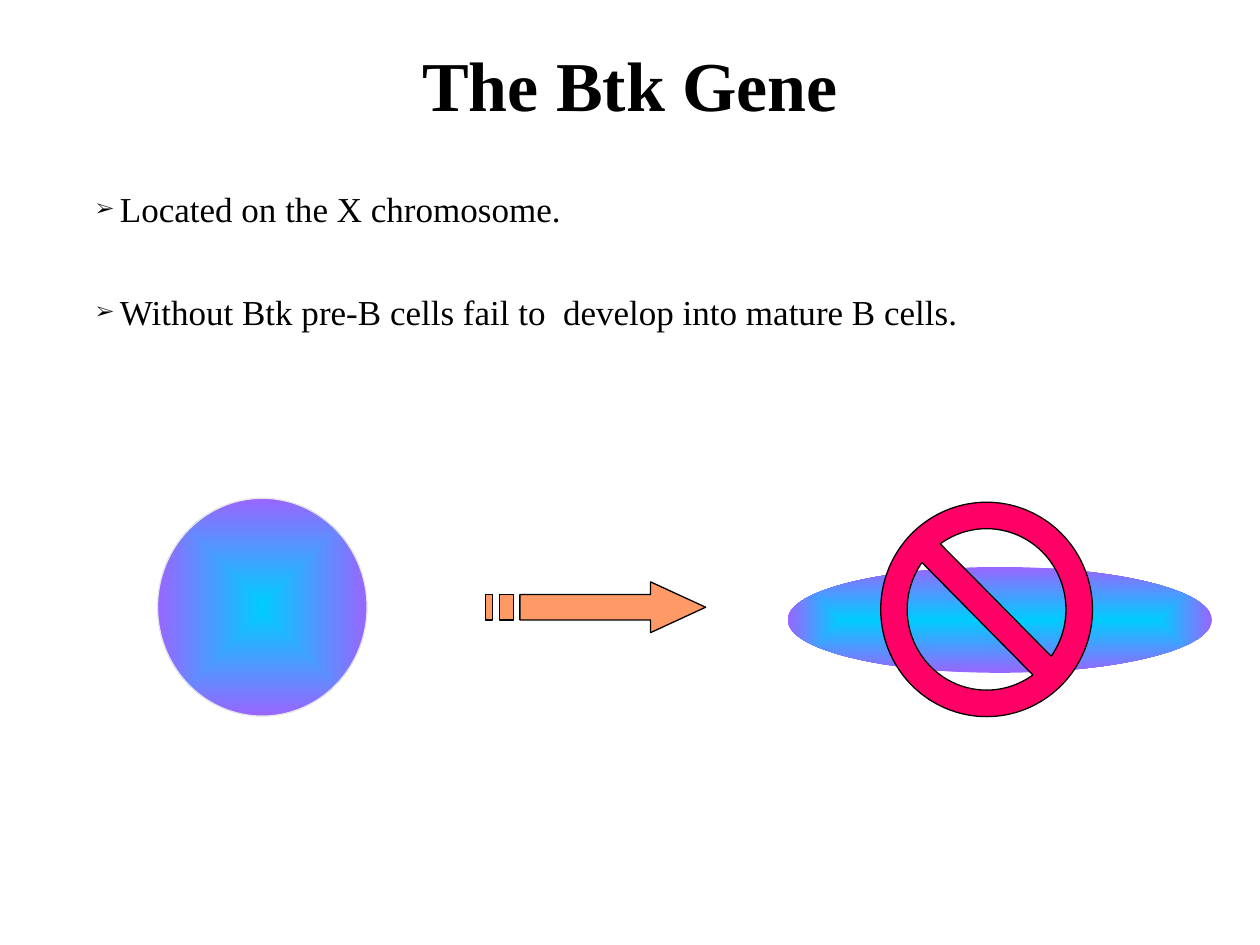
from dataclasses import dataclass
from typing import Optional

from lxml import etree
from pptx import Presentation
from pptx.dml.color import RGBColor
from pptx.enum.shapes import MSO_SHAPE
from pptx.enum.text import MSO_ANCHOR, PP_ALIGN
from pptx.oxml.ns import qn
from pptx.util import Pt

OVAL = MSO_SHAPE.OVAL
BAN = MSO_SHAPE.NO_SYMBOL
TOP, MID = MSO_ANCHOR.TOP, MSO_ANCHOR.MIDDLE
LEFT, CENTER = PP_ALIGN.LEFT, PP_ALIGN.CENTER
FONT = "Times New Roman"
BLACK, CYAN, VIOLET = "000000", "00CCFF", "9966FF"
GRAY, PINK, ORANGE = "E7E6E6", "FF0066", "FF9966"


@dataclass
class Box:
    x: float
    y: float
    w: float
    h: float

    def emu(self):
        return [Pt(v) for v in (self.x, self.y, self.w, self.h)]


@dataclass
class Cell:
    box: Box
    edge: Optional[str] = None


def tint(code: str) -> RGBColor:
    return RGBColor.from_string(code)


def outline(shape, code: Optional[str]) -> None:
    shape.shadow.inherit = False
    if code is None:
        shape.line.fill.background()
    else:
        shape.line.color.rgb = tint(code)
        shape.line.width = Pt(0.75)


def paint(shape, fill: str) -> None:
    shape.fill.solid()
    shape.fill.fore_color.rgb = tint(fill)
    outline(shape, BLACK)


def add_text(slide, box: Box, lines: list[str], *, size: float,
             bold: bool = False, align=LEFT, anchor=TOP,
             gap: float = 0, mark: Optional[str] = None) -> None:
    frame = slide.shapes.add_textbox(*box.emu()).text_frame
    frame.word_wrap = True
    frame.vertical_anchor = anchor
    for i, line in enumerate(lines):
        para = frame.add_paragraph() if i else frame.paragraphs[0]
        para.alignment = align
        para.line_spacing = 0.9
        para.space_before = Pt(gap if i else 0)
        if mark:
            props = para._p.get_or_add_pPr()
            props.set("marL", str(Pt(13.5)))
            props.set("indent", str(-Pt(13.5)))
            etree.SubElement(props, qn("a:buSzPct"), val="55000")
            etree.SubElement(props, qn("a:buFont"), typeface=FONT)
            etree.SubElement(props, qn("a:buChar"), char=mark)
        run = para.add_run()
        run.text = line
        run.font.name = FONT
        run.font.size = Pt(size)
        run.font.bold = bold
        run.font.color.rgb = tint(BLACK)


def add_cell(shapes, cell: Cell) -> None:
    oval = shapes.add_shape(OVAL, *cell.box.emu())
    oval.fill.gradient()
    for stop, code in zip(oval.fill.gradient_stops, (CYAN, VIOLET)):
        stop.color.rgb = tint(code)
    grad = oval._element.spPr.find(qn("a:gradFill"))
    grad.remove(grad.find(qn("a:lin")))
    path = etree.SubElement(grad, qn("a:path"), path="shape")
    sides = dict.fromkeys("ltrb", "50000")
    etree.SubElement(path, qn("a:fillToRect"), **sides)
    outline(oval, cell.edge)


def add_ban(shapes, box: Box) -> None:
    ban = shapes.add_shape(BAN, *box.emu())
    ban.adjustments[0] = 0.125
    paint(ban, PINK)


def add_arrow(shapes, box: Box) -> None:
    top, low = box.y + box.h / 4, box.y + box.h * 3 / 4
    end, neck = box.x + box.w, box.x + box.w * 0.75
    body = box.x + 19.6
    rings = [[(neck, box.y), (neck, top), (body, top), (body, low),
              (neck, low), (neck, box.y + box.h), (end, box.y + box.h / 2)]]
    for left, wide in ((7.9, 8), (0, 4)):
        x = box.x + left
        rings.append([(x, top), (x, low), (x + wide, low), (x + wide, top)])
    pen = None
    for ring in rings:
        spots = [(Pt(x), Pt(y)) for x, y in ring]
        if pen is None:
            pen = shapes.build_freeform(*spots[0])
        else:
            pen.move_to(*spots[0])
        pen.add_line_segments(spots[1:], close=True)
    paint(pen.convert_to_shape(), ORANGE)


def main() -> None:
    deck = Presentation()
    deck.slide_width, deck.slide_height = Pt(720), Pt(540)
    slide = deck.slides.add_slide(deck.slide_layouts[6])
    add_text(slide, Box(0, 18, 720, 66), ["The Btk Gene"],
             size=40, bold=True, align=CENTER, anchor=MID)
    add_text(slide, Box(48, 106.5, 654, 294),
             ["Located on the X chromosome.",
              "Without Btk pre-B cells fail to  develop into mature B cells."],
             size=20, gap=37.3, mark="➢")
    add_cell(slide.shapes, Cell(Box(90, 284.75, 119.75, 124.5), GRAY))
    group = slide.shapes.add_group_shape()
    add_cell(group.shapes, Cell(Box(450, 324, 242.5, 60.5)))
    add_ban(group.shapes, Box(503.25, 287, 121, 122.5))
    add_arrow(slide.shapes, Box(277.5, 332.5, 125.75, 29))
    deck.save("out.pptx")


if __name__ == "__main__":
    main()
